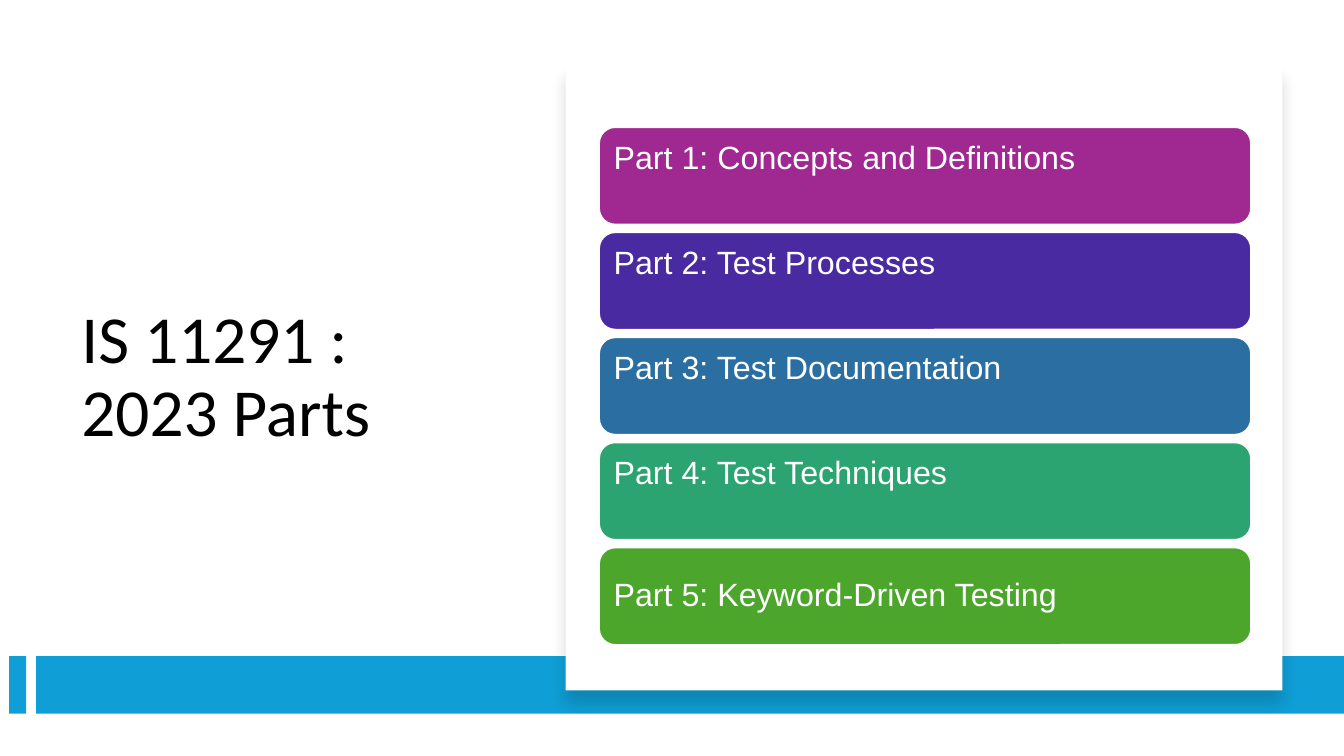
import pptx
import pptx.util
import pptx.dml.color
import pptx.enum.shapes
import pptx.enum.text
import pptx.oxml
import pptx.oxml.ns

Inches = pptx.util.Inches
Pt = pptx.util.Pt
RGBColor = pptx.dml.color.RGBColor
SHAPE = pptx.enum.shapes.MSO_SHAPE
ANCHOR = pptx.enum.text.MSO_ANCHOR
ALIGN = pptx.enum.text.PP_ALIGN

BLACK = RGBColor(0x00, 0x00, 0x00)
WHITE = RGBColor(0xFF, 0xFF, 0xFF)
BAND_BLUE = RGBColor(0x0F, 0x9E, 0xD5)
PURPLE = RGBColor(0xA0, 0x28, 0x91)
INDIGO = RGBColor(0x4A, 0x2A, 0xA0)
STEEL_BLUE = RGBColor(0x2B, 0x6F, 0xA2)
TEAL = RGBColor(0x2B, 0xA4, 0x71)
GREEN = RGBColor(0x4C, 0xA6, 0x2C)

PARTS = [
    ("Part 1: Concepts and Definitions", PURPLE, ANCHOR.TOP),
    ("Part 2: Test Processes", INDIGO, ANCHOR.TOP),
    ("Part 3: Test Documentation", STEEL_BLUE, ANCHOR.TOP),
    ("Part 4: Test Techniques", TEAL, ANCHOR.TOP),
    ("Part 5: Keyword-Driven Testing", GREEN, ANCHOR.MIDDLE),
]

CARD_SHADOW = (
    '<a:effectLst xmlns:a="http://schemas.openxmlformats.org/drawingml/2006/main">'
    '<a:outerShdw blurRad="%d" dist="%d" dir="5400000" algn="t" rotWithShape="0">'
    '<a:srgbClr val="000000"><a:alpha val="15000"/></a:srgbClr>'
    "</a:outerShdw></a:effectLst>"
)


def set_attributes(target, values):
    """Set each named attribute of the target."""
    for name, value in values.items():
        setattr(target, name, value)


def add_block(slide, kind, left, top, width, height, color):
    """Add a flat filled shape without outline or shadow."""
    shape = slide.shapes.add_shape(
        kind, Inches(left), Inches(top), Inches(width), Inches(height)
    )
    shape.shadow.inherit = False
    shape.fill.solid()
    shape.fill.fore_color.rgb = color
    shape.line.fill.background()
    return shape


def write_text(shape, text, color, font, frame):
    """Write one left-aligned paragraph with the given formats."""
    set_attributes(shape.text_frame, {"word_wrap": True, **frame})
    paragraph = shape.text_frame.paragraphs[0]
    set_attributes(paragraph, {"line_spacing": 0.9, "alignment": ALIGN.LEFT})
    run = paragraph.add_run()
    run.text = text
    set_attributes(run.font, font)
    run.font.color.rgb = color


def add_title(slide, left, top, width, height):
    """Place the slide title in the given box."""
    title = slide.shapes.add_textbox(
        Inches(left), Inches(top), Inches(width), Inches(height)
    )
    write_text(
        title,
        "IS 11291 : 2023 Parts",
        BLACK,
        {"name": "Calibri", "size": Pt(48)},
        {"vertical_anchor": ANCHOR.MIDDLE},
    )


def add_footer_band(slide, left, top, width, height):
    """Place the short tab and the long bar of the bottom band."""
    tab_width, bar_offset = 0.17, 0.27
    add_block(slide, SHAPE.RECTANGLE, left, top, tab_width, height, BAND_BLUE)
    add_block(
        slide, SHAPE.RECTANGLE,
        left + bar_offset, top, width - bar_offset, height, BAND_BLUE,
    )


def add_card(slide, left, top, width, height):
    """Place the white card with its soft shadow and the list of parts."""
    card = add_block(slide, SHAPE.RECTANGLE, left, top, width, height, WHITE)
    properties = card._element.spPr
    properties.remove(properties.find(pptx.oxml.ns.qn("a:effectLst")))
    properties.append(pptx.oxml.parse_xml(CARD_SHADOW % (Pt(11), Pt(10))))
    add_parts(slide, left + 0.33, top + 0.62, width - 0.64, 5.14)


def add_parts(slide, left, top, width, height):
    """Stack one rounded bar per part evenly in the given box."""
    bar_height = 0.97
    pitch = (height - bar_height) / (len(PARTS) - 1)
    margins = {
        f"margin_{side}": Inches(0.1) for side in ("left", "right", "top", "bottom")
    }
    for index, (text, color, anchor) in enumerate(PARTS):
        bar = add_block(
            slide, SHAPE.ROUNDED_RECTANGLE,
            left, top + index * pitch, width, bar_height, color,
        )
        bar.adjustments[0] = 0.167
        bar.line.color.rgb = WHITE
        bar.line.width = Pt(1.5)
        write_text(
            bar,
            text,
            WHITE,
            {"name": "Arial", "size": Pt(23)},
            {"vertical_anchor": anchor, **margins},
        )


def main():
    """Build the slide and save it."""
    presentation = pptx.Presentation()
    set_attributes(
        presentation, {"slide_width": Inches(13.33), "slide_height": Inches(7.5)}
    )
    slide = presentation.slides.add_slide(presentation.slide_layouts[6])
    add_title(slide, 0.71, 1.2, 4.15, 5.1)
    add_footer_band(slide, 0.09, 6.51, 13.24, 0.57)
    add_card(slide, 5.61, 0.64, 7.11, 6.21)
    presentation.save("out.pptx")


if __name__ == "__main__":
    main()
